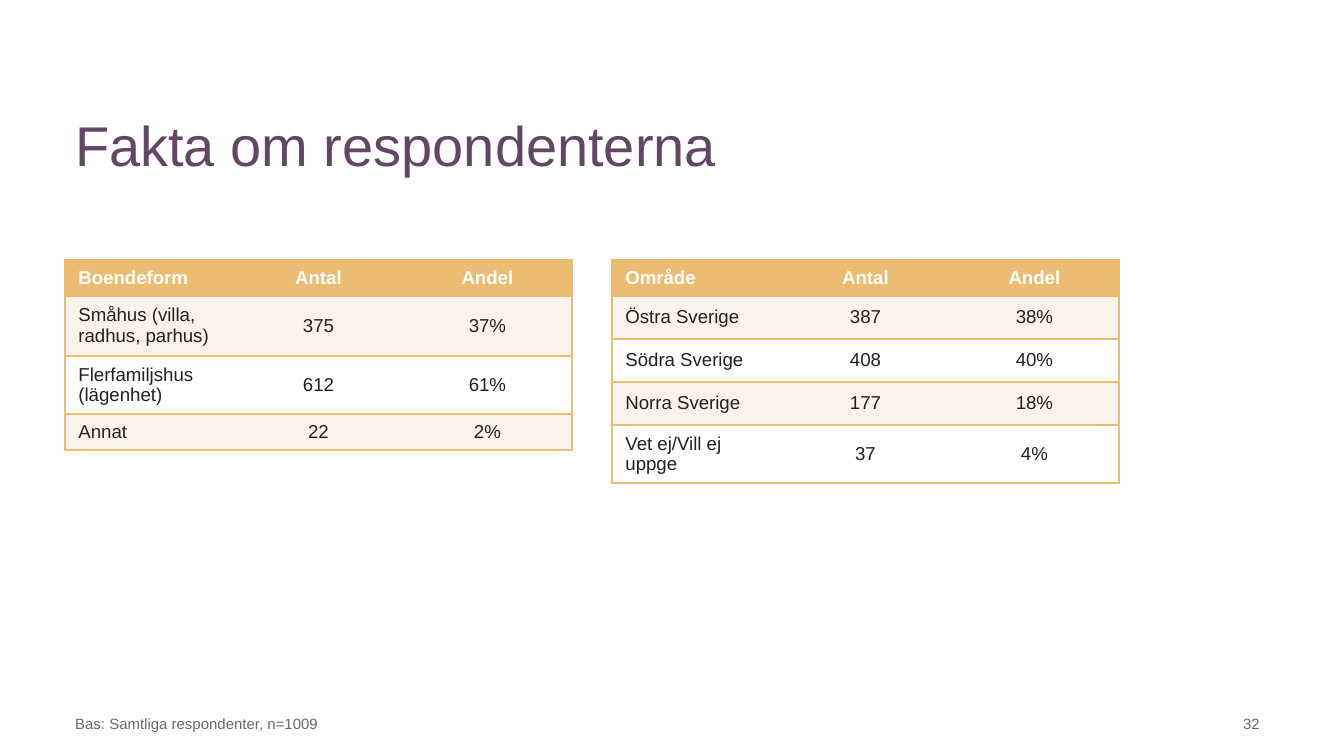
from dataclasses import dataclass

from lxml.etree import SubElement
from pptx import Presentation
from pptx.dml.color import RGBColor
from pptx.enum.text import MSO_ANCHOR, PP_ALIGN
from pptx.oxml.ns import qn
from pptx.slide import Slide
from pptx.table import _Cell
from pptx.text.text import _Paragraph
from pptx.util import Emu, Pt

WIDE, HIGH = 1344, 756
SCALE = 9144000 / WIDE
FONT = "Arial"
HUES = {
    "title": "624764",
    "note": "696969",
    "gold": "EBBC71",
    "cream": "FBF3EB",
    "white": "FFFFFF",
    "ink": "212121",
}
TOP, COL = 260, 169


@dataclass
class Label:
    text: str
    left: int
    top: int
    width: int
    height: int
    size: int
    hue: str
    side: PP_ALIGN = PP_ALIGN.LEFT
    hold: MSO_ANCHOR = MSO_ANCHOR.BOTTOM
    inset: int = 7


@dataclass
class Grid:
    left: int
    rows: list[tuple[str, str, str]]
    heights: list[int]


LABELS = [
    Label("Fakta om respondenterna", 62, 99, 966, 78, 30, "title",
          hold=MSO_ANCHOR.TOP, inset=12),
    Label("Bas: Samtliga respondenter, n=1009", 62, 700, 1048, 40, 8, "note"),
    Label("32", 1129, 700, 144, 40, 8, "note", side=PP_ALIGN.RIGHT),
]
GRIDS = [
    Grid(65, [
        ("Boendeform", "Antal", "Andel"),
        ("Småhus (villa, radhus, parhus)", "375", "37%"),
        ("Flerfamiljshus (lägenhet)", "612", "61%"),
        ("Annat", "22", "2%"),
    ], [34, 60, 55, 34]),
    Grid(612, [
        ("Område", "Antal", "Andel"),
        ("Östra Sverige", "387", "38%"),
        ("Södra Sverige", "408", "40%"),
        ("Norra Sverige", "177", "18%"),
        ("Vet ej/Vill ej uppge", "37", "4%"),
    ], [34, 43, 43, 43, 55]),
]


def px(count: int) -> Emu:
    return Emu(round(count * SCALE))


def add_run(para: _Paragraph, text: str, size: int, hue: str,
            bold: bool = False) -> None:
    run = para.add_run()
    run.text = text
    run.font.name = FONT
    run.font.size = Pt(size)
    run.font.bold = bold
    run.font.color.rgb = RGBColor.from_string(HUES[hue])


def draw_label(slide: Slide, label: Label) -> None:
    box = slide.shapes.add_textbox(px(label.left), px(label.top),
                                   px(label.width), px(label.height))
    frame = box.text_frame
    frame.word_wrap = True
    frame.vertical_anchor = label.hold
    frame.margin_top = frame.margin_bottom = px(label.inset)
    para = frame.paragraphs[0]
    para.alignment = label.side
    add_run(para, label.text, label.size, label.hue)


def add_lines(cell: _Cell, sides: str) -> None:
    """Rule the named sides (of L, R, T, B) in gold and clear the others."""
    props = cell._tc.get_or_add_tcPr()
    for side in "LRTB":
        line = SubElement(props, qn(f"a:ln{side}"), w=str(Pt(1)))
        if side in sides:
            fill = SubElement(line, qn("a:solidFill"))
            SubElement(fill, qn("a:srgbClr"), val=HUES["gold"])
        else:
            SubElement(line, qn("a:noFill"))


def draw_grid(slide: Slide, grid: Grid) -> None:
    count = len(grid.rows[0])
    shape = slide.shapes.add_table(len(grid.rows), count, px(grid.left), px(TOP),
                                   px(COL * count), px(sum(grid.heights)))
    table = shape.table
    for col in table.columns:
        col.width = px(COL)
    for r, (texts, height) in enumerate(zip(grid.rows, grid.heights)):
        table.rows[r].height = px(height)
        head = r == 0
        back = "gold" if head else "cream" if r % 2 else "white"
        for c, text in enumerate(texts):
            cell = table.cell(r, c)
            ends = ("L" if c == 0 else "") + ("R" if c == count - 1 else "")
            add_lines(cell, "TB" + ends)
            cell.fill.solid()
            cell.fill.fore_color.rgb = RGBColor.from_string(HUES[back])
            cell.vertical_anchor = MSO_ANCHOR.MIDDLE
            para = cell.text_frame.paragraphs[0]
            para.alignment = PP_ALIGN.CENTER if c else PP_ALIGN.LEFT
            add_run(para, text, 10, "white" if head else "ink", head)


def main() -> None:
    deck = Presentation()
    deck.slide_width, deck.slide_height = px(WIDE), px(HIGH)
    slide = deck.slides.add_slide(deck.slide_layouts[6])
    for label in LABELS:
        draw_label(slide, label)
    for grid in GRIDS:
        draw_grid(slide, grid)
    deck.save("out.pptx")


if __name__ == "__main__":
    main()
